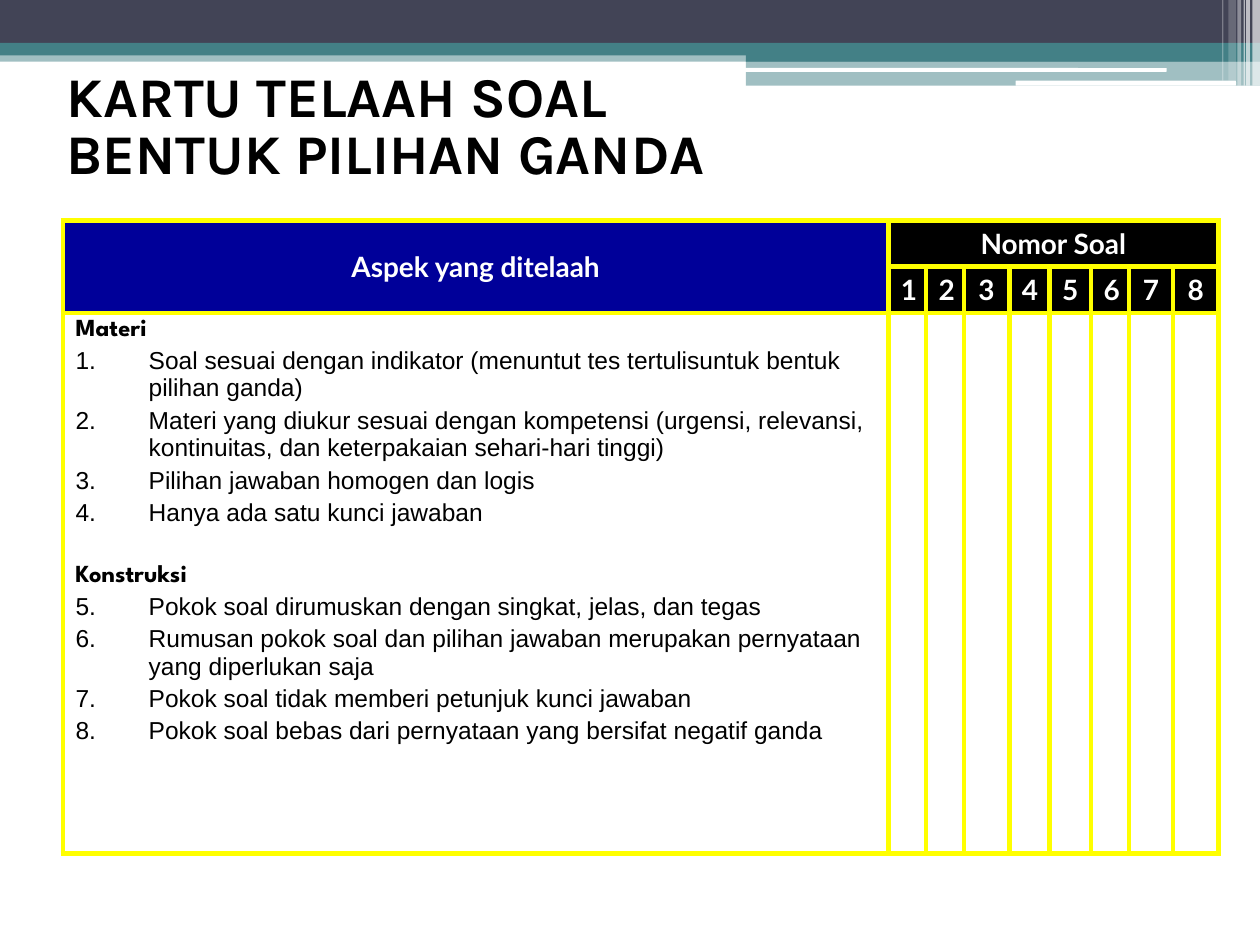
from dataclasses import dataclass
from lxml.etree import SubElement
from pptx import Presentation
from pptx.dml.color import RGBColor
from pptx.enum.shapes import MSO_SHAPE
from pptx.enum.text import MSO_ANCHOR, PP_ALIGN
from pptx.oxml.ns import qn
from pptx.util import Inches, Pt


@dataclass(frozen=True)
class Theme:
    slate: str = "424456"
    teal: str = "438086"
    white: str = "FFFFFF"
    black: str = "000000"
    navy: str = "000099"
    yellow: str = "FFFF00"
    title: tuple = ("Karla", 32)
    head: tuple = ("Lato", 16)
    group: tuple = ("League Spartan", 14)
    body: tuple = ("Arial", 14)


class Deck:
    def __init__(self, theme):
        self.theme = theme
        self.file = Presentation()
        self.file.slide_width = Inches(10)
        self.file.slide_height = Inches(7.5)
        self.slide = self.file.slides.add_slide(self.file.slide_layouts[6])

    def font(self, para, style, color, bold=False):
        font = para.font
        font.name, size = style
        font.size = Pt(size)
        font.bold = bold
        font.color.rgb = RGBColor.from_string(color)

    def bar(self, box, color, alpha=100, round=False):
        kind = MSO_SHAPE.ROUNDED_RECTANGLE if round else MSO_SHAPE.RECTANGLE
        shape = self.slide.shapes.add_shape(kind, *map(Inches, box))
        shape.shadow.inherit = False
        shape.line.fill.background()
        shape.fill.solid()
        shape.fill.fore_color.rgb = RGBColor.from_string(color)
        if alpha < 100:
            tint = shape.fill._xPr.find(qn("a:solidFill"))[0]
            SubElement(tint, qn("a:alpha"), val=str(alpha * 1000))

    def title(self, box, lines):
        frame = self.slide.shapes.add_textbox(*map(Inches, box)).text_frame
        frame.word_wrap = True
        frame.vertical_anchor = MSO_ANCHOR.MIDDLE
        para = frame.paragraphs[0]
        para.text = "\v".join(lines)
        para.line_spacing = 0.85
        self.font(para, self.theme.title, self.theme.black, True)

    def table(self, left, top, cols, rows):
        frame = self.slide.shapes.add_table(
            len(rows), len(cols), Inches(left), Inches(top),
            Inches(sum(cols)), Inches(sum(rows)))
        table = frame.table
        table.first_row = table.horz_banding = False
        for col, width in zip(table.columns, cols):
            col.width = Inches(width)
        for row, height in zip(table.rows, rows):
            row.height = Inches(height)
        for cell in table.iter_cells():
            self.border(cell)
            cell.fill.background()
        return table

    def border(self, cell):
        props = cell._tc.get_or_add_tcPr()
        for side in ("lnL", "lnR", "lnT", "lnB"):
            line = SubElement(props, qn(f"a:{side}"), w=str(Pt(3)))
            fill = SubElement(line, qn("a:solidFill"))
            SubElement(fill, qn("a:srgbClr"), val=self.theme.yellow)

    def head(self, cell, text, color):
        cell.fill.solid()
        cell.fill.fore_color.rgb = RGBColor.from_string(color)
        cell.vertical_anchor = MSO_ANCHOR.MIDDLE
        para = cell.text_frame.paragraphs[0]
        para.text = text
        para.alignment = PP_ALIGN.CENTER
        self.font(para, self.theme.head, self.theme.white, True)

    def groups(self, cell, groups):
        frame = cell.text_frame
        start = 1
        for name, items in groups:
            if start == 1:
                para = frame.paragraphs[0]
            else:
                para = frame.add_paragraph()
                para.space_before = Pt(22)
            para.text = name
            self.font(para, self.theme.group, self.theme.black, True)
            for item in items:
                para = frame.add_paragraph()
                para.text = item
                para.space_before = Pt(2.8)
                self.number(para, start)
                self.font(para, self.theme.body, self.theme.black)
            start += len(items)

    def number(self, para, start):
        props = para._p.get_or_add_pPr()
        props.set("marL", str(Inches(0.58)))
        props.set("indent", str(Inches(-0.58)))
        SubElement(props, qn("a:buFont"), typeface=self.theme.body[0])
        SubElement(props, qn("a:buAutoNum"), type="arabicPeriod", startAt=str(start))


GROUPS = (
    ("Materi", (
        "Soal sesuai dengan indikator (menuntut tes tertulisuntuk bentuk pilihan ganda)",
        "Materi yang diukur sesuai dengan kompetensi (urgensi, relevansi, "
        "kontinuitas, dan keterpakaian sehari-hari tinggi)",
        "Pilihan jawaban homogen dan logis",
        "Hanya ada satu kunci jawaban",
    )),
    ("Konstruksi", (
        "Pokok soal dirumuskan dengan singkat, jelas, dan tegas",
        "Rumusan pokok soal dan pilihan jawaban merupakan pernyataan yang diperlukan saja",
        "Pokok soal tidak memberi petunjuk kunci jawaban",
        "Pokok soal bebas dari pernyataan yang bersifat negatif ganda",
    )),
)


def main():
    theme = Theme()
    deck = Deck(theme)

    deck.bar((0, 0.4, 10, 0.09), theme.teal, 50)
    deck.bar((0, 0, 10, 0.34), theme.slate)
    deck.bar((0, 0.34, 10, 0.1), theme.teal)
    deck.bar((5.92, 0.39, 4.08, 0.1), theme.teal)
    deck.bar((5.92, 0.48, 4.08, 0.2), theme.teal, 50)
    deck.bar((5.91, 0.54, 3.35, 0.03), theme.white, round=True)
    deck.bar((8.06, 0.64, 1.75, 0.04), theme.white, round=True)
    stripes = (
        (9.94, 0.06, 0.68, 65), (9.89, 0.03, 0.68, 65), (9.87, 0.01, 0.68, 60),
        (9.82, 0.03, 0.68, 40), (9.75, 0.06, 0.64, 20), (9.7, 0.01, 0.64, 30),
    )
    for left, width, height, alpha in stripes:
        deck.bar((left, 0, width, height), theme.white, alpha)

    deck.title((0.43, 0.69, 8.08, 0.66), ("KARTU TELAAH SOAL", "BENTUK PILIHAN GANDA"))

    cols = (6.55, 0.3, 0.3, 0.36, 0.32, 0.33, 0.3, 0.35, 0.36)
    table = deck.table(0.5, 1.75, cols, (0.36, 0.36, 4.29))
    table.cell(0, 0).merge(table.cell(1, 0))
    table.cell(0, 1).merge(table.cell(0, 8))
    deck.head(table.cell(0, 0), "Aspek yang ditelaah", theme.navy)
    deck.head(table.cell(0, 1), "Nomor Soal", theme.black)
    for num in range(1, len(cols)):
        deck.head(table.cell(1, num), str(num), theme.black)
    deck.groups(table.cell(2, 0), GROUPS)

    deck.file.save("out.pptx")


if __name__ == "__main__":
    main()
